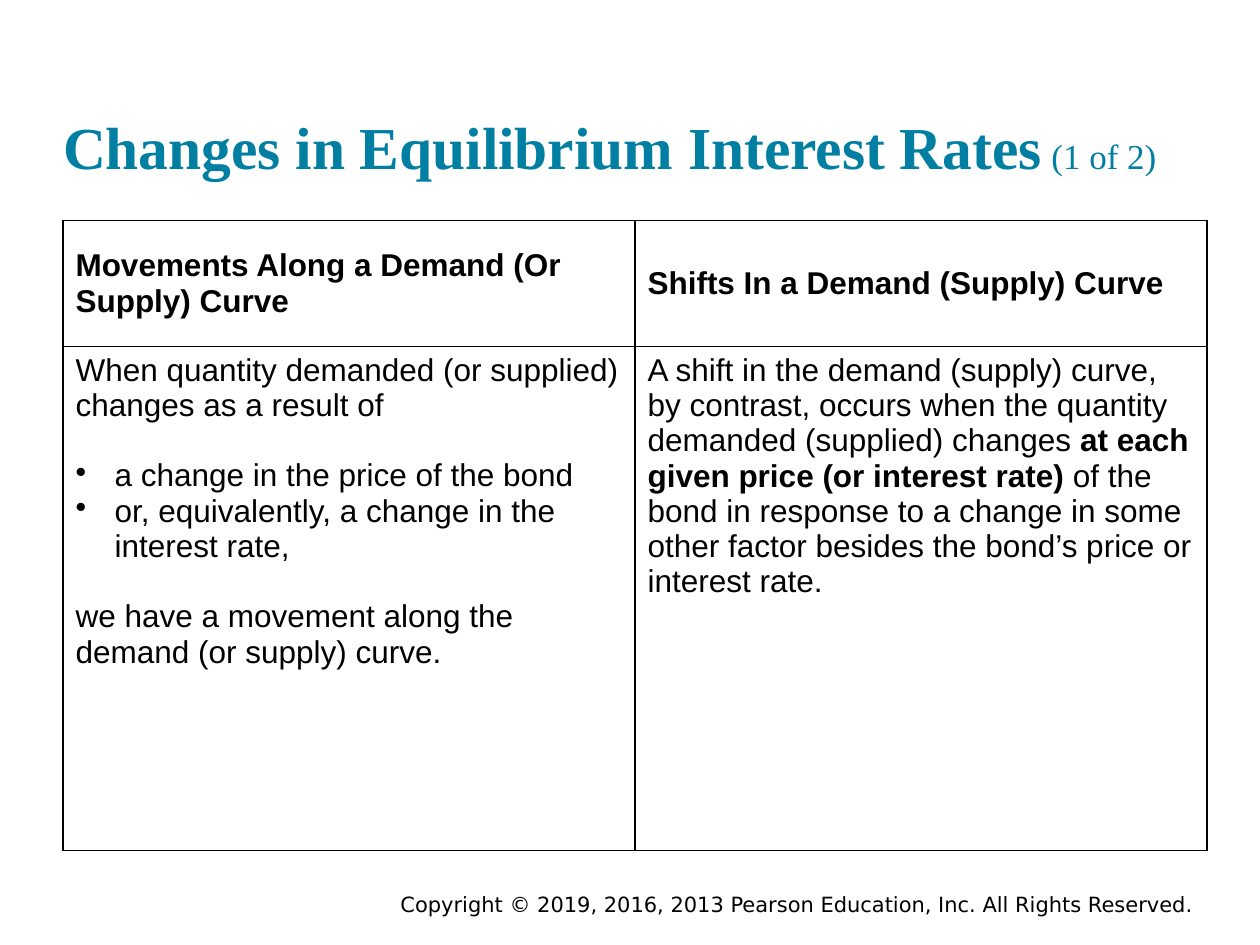
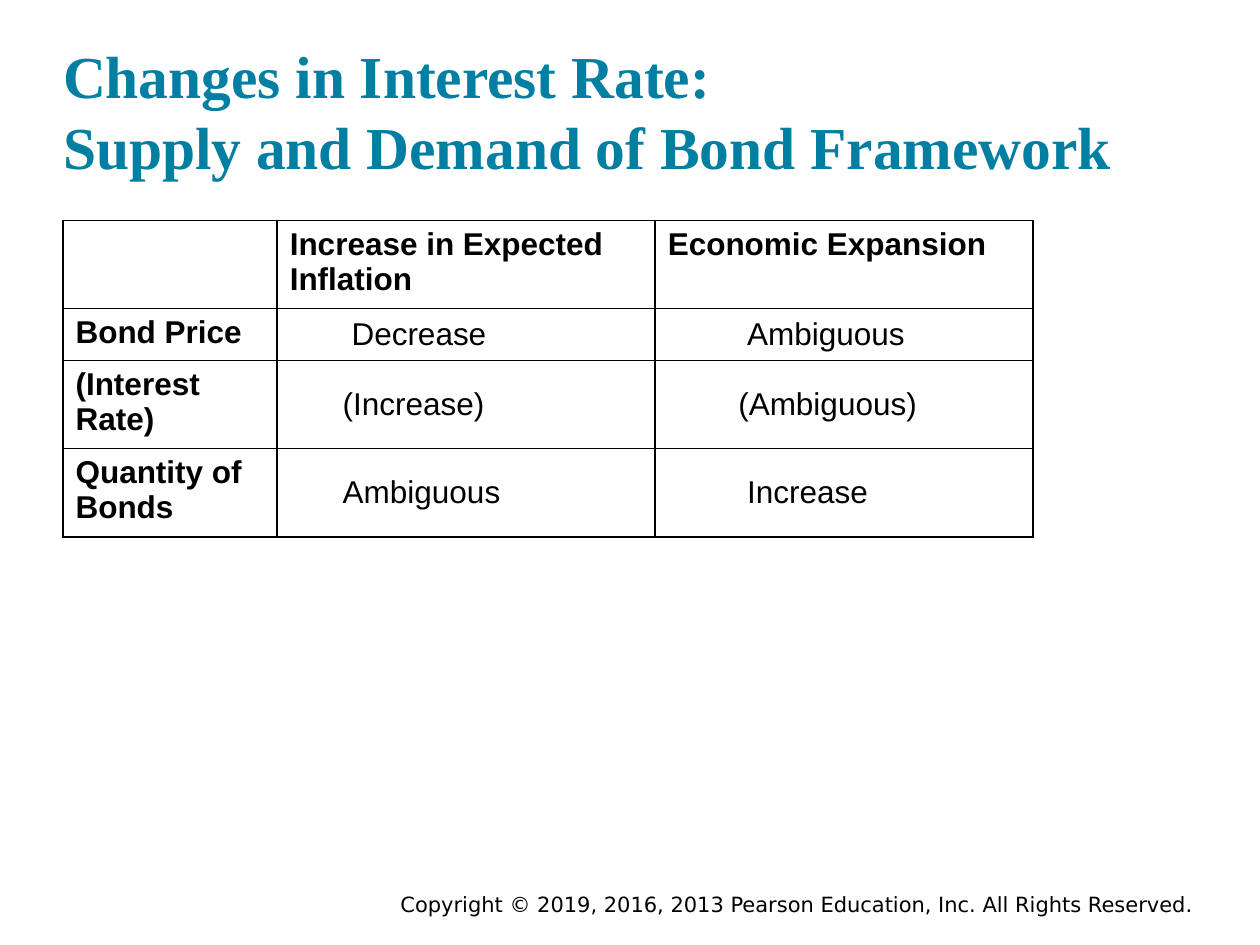
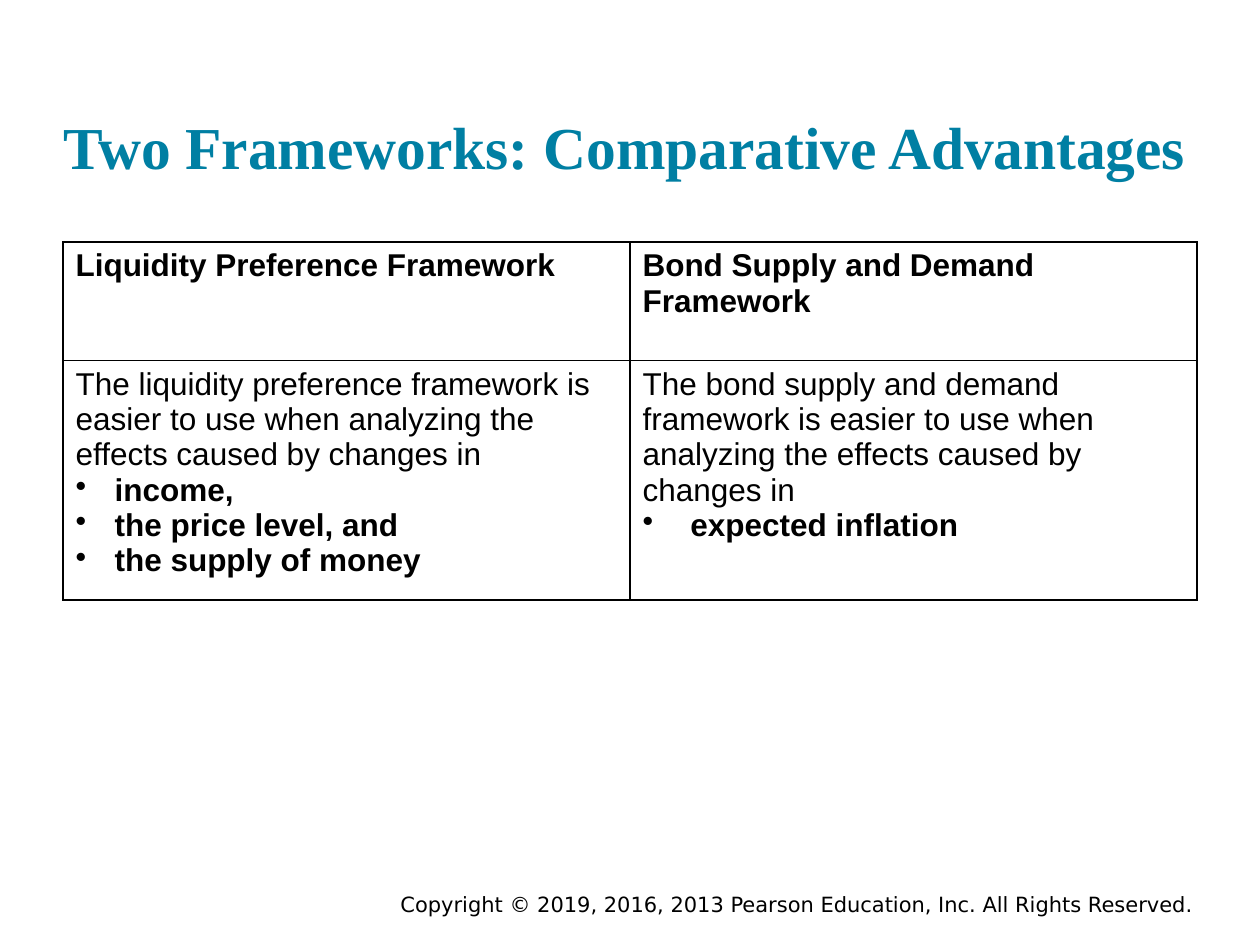
from dataclasses import dataclass

from lxml.etree import SubElement as Sub
from pptx import Presentation
from pptx.dml.color import RGBColor as Color
from pptx.enum.text import MSO_ANCHOR as Anchor
from pptx.enum.text import MSO_AUTO_SIZE as Fit
from pptx.enum.text import PP_ALIGN as Align
from pptx.oxml.ns import qn
from pptx.util import Inches, Pt


@dataclass(frozen=True)
class Theme:
    teal: Color = Color(0x00, 0x7F, 0xA3)
    black: Color = Color(0, 0, 0)
    serif: str = "Times New Roman"
    sans: str = "Arial"
    small: str = "DejaVu Sans"
    head: int = 34
    count: int = 20
    body: int = 18
    foot: int = 12
    rule: int = 1
    hang: float = 0.31
    space: float = 0.07


@dataclass
class Para:
    text: str
    bold: bool = False
    left: float = 0
    bullet: bool = False
    before: int = 0
    strong: str = ""
    rest: str = ""


def style(font, face, size, color, bold=False):
    font.name = face
    font.size = Pt(size)
    font.color.rgb = color
    font.bold = bold


class Deck:
    def __init__(self, theme):
        self.theme = theme
        self.show = Presentation()
        self.show.slide_width = Inches(10)
        self.show.slide_height = Inches(7.5)
        self.slide = None

    def page(self, title, count=""):
        self.slide = self.show.slides.add_slide(self.show.slide_layouts[5])
        self.title(title, count)
        self.footer()

    def title(self, text, count):
        look = self.theme
        shape = self.slide.shapes.title
        shape.left, shape.top = Inches(0.5), Inches(0.24)
        shape.width, shape.height = Inches(9), Inches(1.2)
        frame = shape.text_frame
        frame.auto_size = Fit.NONE
        frame.vertical_anchor = Anchor.BOTTOM
        frame.margin_left = frame.margin_right = 0
        frame.margin_top = frame.margin_bottom = 0
        frame.text = text
        para = frame.paragraphs[0]
        para.alignment = Align.LEFT
        style(para.font, look.serif, look.head, look.teal, True)
        if count:
            run = para.add_run()
            run.text = " " + count
            run.font.size = Pt(look.count)
            run.font.bold = False

    def footer(self):
        look = self.theme
        box = self.slide.shapes.add_textbox(
            Inches(2.95), Inches(7.03), Inches(6.75), Inches(0.3))
        frame = box.text_frame
        frame.word_wrap = True
        frame.text = ("Copyright © 2019, 2016, 2013 Pearson Education, Inc. "
                      "All Rights Reserved.")
        para = frame.paragraphs[0]
        para.alignment = Align.CENTER
        style(para.font, look.small, look.foot, look.black)

    def table(self, top, cols, rows, cells, middle=()):
        grid = self.slide.shapes.add_table(
            len(rows), len(cols), Inches(0.5), Inches(top),
            Inches(sum(cols)), Inches(sum(rows))).table
        grid.first_row = grid.horz_banding = False
        for col, width in zip(grid.columns, cols):
            col.width = Inches(width)
        for row, height in zip(grid.rows, rows):
            row.height = Inches(height)
        for r, line in enumerate(cells):
            for c, paras in enumerate(line):
                cell = grid.cell(r, c)
                if (r, c) in middle:
                    cell.vertical_anchor = Anchor.MIDDLE
                self.border(cell)
                cell.fill.background()
                self.fill(cell.text_frame, paras)

    def border(self, cell):
        props = cell._tc.get_or_add_tcPr()
        for side in ("lnL", "lnR", "lnT", "lnB"):
            line = Sub(props, qn(f"a:{side}"), w=str(Pt(self.theme.rule)))
            fill = Sub(line, qn("a:solidFill"))
            Sub(fill, qn("a:srgbClr"), val=str(self.theme.black))

    def fill(self, frame, paras):
        look = self.theme
        for i, item in enumerate(paras):
            para = frame.add_paragraph() if i else frame.paragraphs[0]
            props = para._p.get_or_add_pPr()
            if item.left:
                props.set("marL", str(Inches(item.left)))
            if item.bullet:
                props.set("indent", str(-Inches(item.left)))
                Sub(props, qn("a:buChar"), char="•")
            if item.before:
                para.space_before = Pt(item.before)
            style(para.font, look.sans, look.body, look.black, item.bold)
            para.add_run().text = item.text
            if item.strong:
                run = para.add_run()
                run.text = item.strong
                run.font.bold = True
                para.add_run().text = item.rest

    def save(self):
        self.show.save("out.pptx")


def heads(*names):
    return [[Para(name, bold=True)] if name else [] for name in names]


def point(text, bold=False, before=0, left=Theme.hang):
    return Para(text, bold, left, True, before)


def inset(text, spaces):
    return [Para(text, left=spaces * Theme.space)]


def main():
    deck = Deck(Theme())

    deck.page("Changes in Equilibrium Interest Rates", "(1 of 2)")
    moves = [
        Para("When quantity demanded (or supplied) changes as a result of"),
        point("a change in the price of the bond", before=20),
        point("or, equivalently, a change in the interest rate,"),
        Para("we have a movement along the demand (or supply) curve.",
             before=20),
    ]
    shifts = [Para(
        "A shift in the demand (supply) curve, by contrast, occurs when the "
        "quantity demanded (supplied) changes ",
        strong="at each given price (or interest rate)",
        rest=" of the bond in response to a change in some other factor "
             "besides the bond’s price or interest rate.")]
    deck.table(1.75, [4.54] * 2, [1, 4], [
        heads("Movements Along a Demand (Or Supply) Curve",
              "Shifts In a Demand (Supply) Curve"),
        [moves, shifts],
    ], middle=[(0, 0), (0, 1)])

    deck.page("Changes in Interest Rate: \vSupply and Demand of Bond Framework")
    deck.table(1.75, [1.7, 3, 3], [0.66, 0.41, 0.66, 0.66], [
        heads("", "Increase in Expected Inflation", "Economic Expansion"),
        heads("Bond Price") + [inset("Decrease", 7), inset("Ambiguous", 9)],
        heads("(Interest Rate)")
        + [inset("(Increase)", 6), inset("(Ambiguous)", 8)],
        heads("Quantity of Bonds")
        + [inset("Ambiguous", 6), inset("Increase", 9)],
    ], middle=[(r, c) for r in (1, 2, 3) for c in (1, 2)])

    deck.page("Two Frameworks: Comparative Advantages")
    ease = ("The {} framework is easier to use when analyzing the effects "
            "caused by changes in")
    money = [Para(ease.format("liquidity preference"))] + [
        point(text, True) for text in
        ("income,", "the price level, and", "the supply of money")]
    bonds = [Para(ease.format("bond supply and demand")),
             point("expected inflation", True, left=0.38)]
    deck.table(1.92, [4.5] * 2, [0.94, 1.78], [
        heads("Liquidity Preference Framework",
              "Bond Supply and Demand Framework"),
        [money, bonds],
    ])

    deck.save()


if __name__ == "__main__":
    main()
